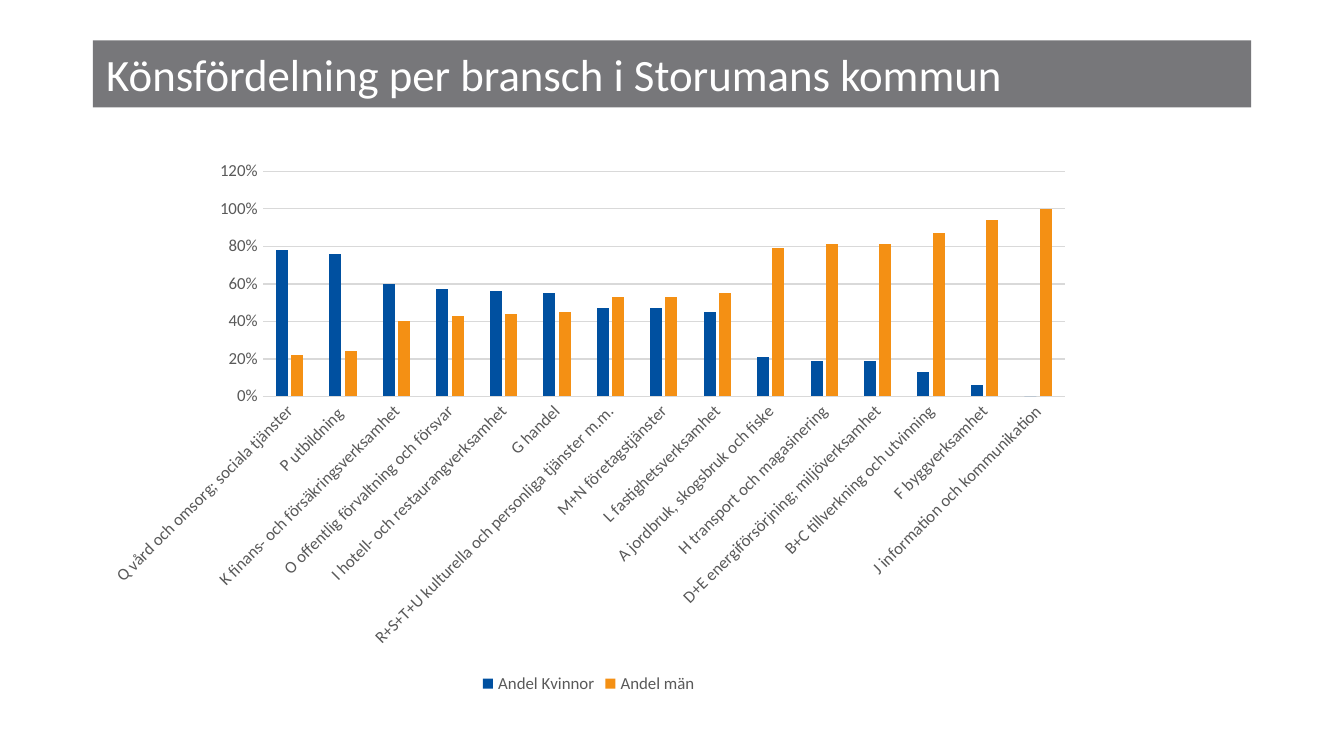
from typing import NamedTuple

from pptx import Presentation
from pptx.chart.data import CategoryChartData
from pptx.dml.color import RGBColor
from pptx.enum import chart as charts, text
from pptx.util import Pt

FONT = "Calibri"
WHITE = RGBColor(0xFF, 0xFF, 0xFF)
BANNER_GREY = RGBColor(0x77, 0x77, 0x7A)
LABEL_GREY = RGBColor(0x59, 0x59, 0x59)
LINE_GREY = RGBColor(0xD9, 0xD9, 0xD9)
BLUE = RGBColor(0x00, 0x50, 0xA0)
ORANGE = RGBColor(0xF4, 0x90, 0x14)


class Box(NamedTuple):
    left: float
    top: float
    width: float
    height: float

    def lengths(self):
        return [Pt(value) for value in self]


class Share(NamedTuple):
    name: str
    color: RGBColor
    values: list[float]


TITLE_BOX = Box(49.68, 21.6, 620.64, 36)
CHART_BOX = Box(49.68, 80.64, 531.36, 293.76)

INDUSTRIES = [
    "Q vård och omsorg; sociala tjänster",
    "P utbildning ",
    "K finans- och försäkringsverksamhet",
    "O offentlig förvaltning och försvar",
    "I hotell- och restaurangverksamhet",
    "G handel",
    "R+S+T+U kulturella och personliga tjänster m.m.",
    "M+N företagstjänster",
    "L fastighetsverksamhet",
    "A jordbruk, skogsbruk och fiske",
    "H transport och magasinering",
    "D+E energiförsörjning; miljöverksamhet",
    "B+C tillverkning och utvinning",
    "F byggverksamhet",
    "J information och kommunikation",
]
SHARES = [
    Share("Andel Kvinnor", BLUE, [0.78, 0.76, 0.6, 0.57, 0.56, 0.55, 0.47, 0.47,
                                  0.45, 0.21, 0.19, 0.19, 0.13, 0.06, 0]),
    Share("Andel män", ORANGE, [0.22, 0.24, 0.4, 0.43, 0.44, 0.45, 0.53, 0.53,
                                0.55, 0.79, 0.81, 0.81, 0.87, 0.94, 1]),
]


def format_font(font, size: float = 9, color: RGBColor = LABEL_GREY) -> None:
    font.name = FONT
    font.size = Pt(size)
    font.bold = False
    font.color.rgb = color


def write_text(shape, content: str, *, size: float, color: RGBColor) -> None:
    frame = shape.text_frame
    frame.text = content
    frame.word_wrap = True
    frame.auto_size = text.MSO_AUTO_SIZE.NONE
    frame.vertical_anchor = text.MSO_ANCHOR.MIDDLE
    paragraph = frame.paragraphs[0]
    paragraph.alignment = text.PP_ALIGN.LEFT
    format_font(paragraph.runs[0].font, size, color)


def format_line(line) -> None:
    line.color.rgb = LINE_GREY
    line.width = Pt(0.75)


def add_title(slide) -> None:
    title = slide.shapes.title
    title.left, title.top, title.width, title.height = TITLE_BOX.lengths()
    title.fill.solid()
    title.fill.fore_color.rgb = BANNER_GREY
    write_text(title, "Könsfördelning per bransch i Storumans kommun",
               size=24, color=WHITE)


def format_axes(chart) -> None:
    for axis in (chart.category_axis, chart.value_axis):
        axis.major_tick_mark = charts.XL_TICK_MARK.NONE
        axis.minor_tick_mark = charts.XL_TICK_MARK.NONE
        format_font(axis.tick_labels.font)

    category_axis = chart.category_axis
    format_line(category_axis.format.line)
    label_body = category_axis._element.xpath("c:txPr/a:bodyPr")[0]
    label_body.set("rot", "-2700000")  # 45 degrees anticlockwise
    label_body.set("vert", "horz")

    value_axis = chart.value_axis
    value_axis.minimum_scale, value_axis.maximum_scale = 0, 1.2
    value_axis.major_unit = 0.2
    value_axis.format.line.fill.background()
    value_axis.has_major_gridlines = True
    format_line(value_axis.major_gridlines.format.line)
    value_axis.tick_labels.number_format = "0%"
    value_axis.tick_labels.number_format_is_linked = False


def add_share_chart(slide) -> None:
    data = CategoryChartData(number_format="0%")
    data.categories = INDUSTRIES
    for share in SHARES:
        data.add_series(share.name, share.values)
    chart = slide.shapes.add_chart(
        charts.XL_CHART_TYPE.COLUMN_CLUSTERED, *CHART_BOX.lengths(), data).chart
    chart.has_title = False
    format_font(chart.font, size=10, color=RGBColor(0, 0, 0))

    plot = chart.plots[0]
    plot.gap_width, plot.overlap = 219, -27
    plot.vary_by_categories = False
    for series, share in zip(plot.series, SHARES):
        series.format.fill.solid()
        series.format.fill.fore_color.rgb = share.color
        series.invert_if_negative = False
    format_axes(chart)

    chart.has_legend = True
    chart.legend.position = charts.XL_LEGEND_POSITION.BOTTOM
    chart.legend.include_in_layout = False
    format_font(chart.legend.font)


def main() -> None:
    presentation = Presentation()
    presentation.slide_width, presentation.slide_height = Pt(720), Pt(405)
    slide = presentation.slides.add_slide(presentation.slide_layouts[5])
    add_title(slide)
    add_share_chart(slide)
    presentation.save("out.pptx")


if __name__ == "__main__":
    main()
